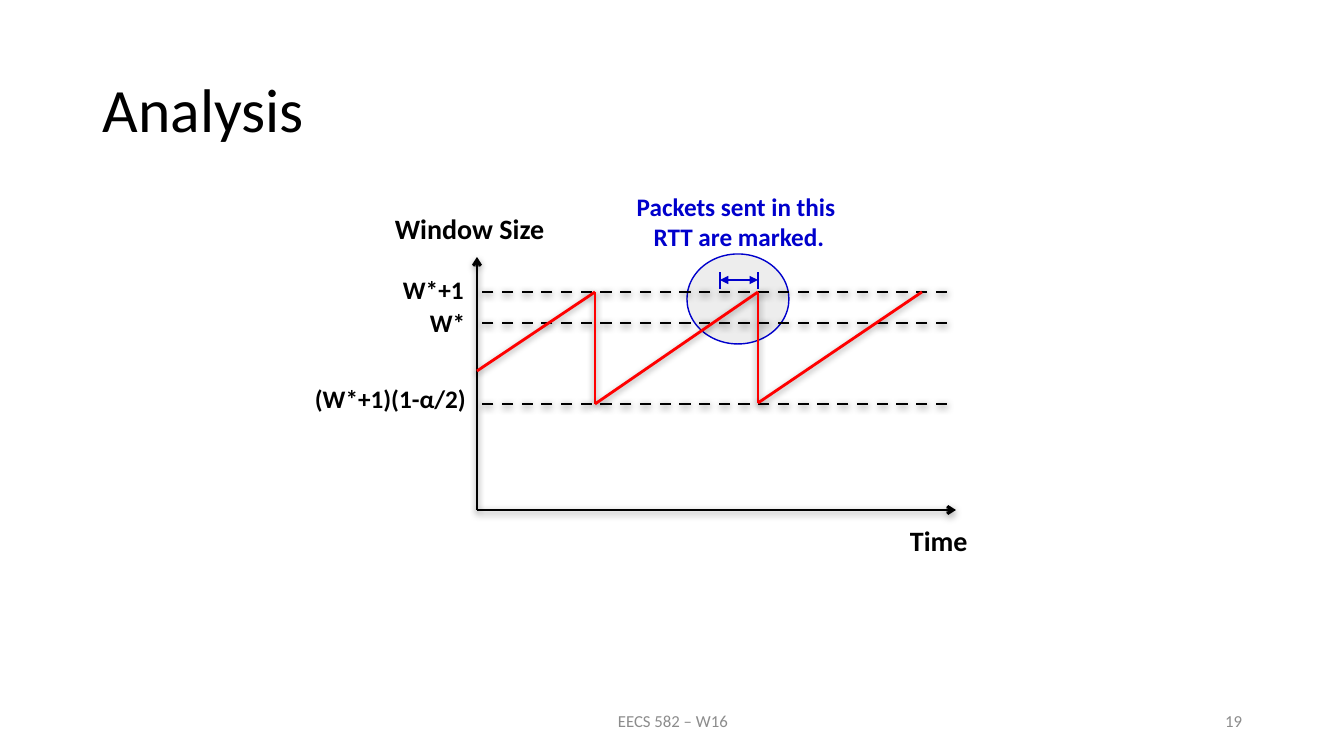
from lxml.etree import SubElement
from pptx import Presentation
from pptx.dml.color import RGBColor
from pptx.enum.dml import MSO_LINE
from pptx.enum.shapes import MSO_CONNECTOR, MSO_SHAPE
from pptx.enum.text import MSO_ANCHOR, PP_ALIGN
from pptx.oxml.ns import qn
from pptx.util import Pt

# Content: lengths in px
PX = 914400 / 100.8
SIZE = (1344, 756)
HUES = {"ink": "000000", "blue": "0000CC", "red": "FF0000",
        "grey": "8C8C8C", "pale": "EDEDED"}

LEFT, MID, RIGHT = PP_ALIGN.LEFT, PP_ALIGN.CENTER, PP_ALIGN.RIGHT
STYLES = {
    "title": {"size": 44, "bold": False, "hue": "ink", "align": LEFT},
    "foot": {"size": 12, "bold": False, "hue": "grey", "align": MID},
    "page": {"size": 12, "bold": False, "hue": "grey", "align": RIGHT},
    "axis": {"size": 20, "bold": True, "hue": "ink", "align": LEFT},
    "level": {"size": 18, "bold": True, "hue": "ink", "align": LEFT},
    "note": {"size": 18, "bold": True, "hue": "blue", "align": MID},
}
CENTRED = ("title", "foot", "page")
TEXTS = [
    ("title", (93, 40, 1159, 146), ["Analysis"]),
    ("foot", (446, 701, 454, 40), ["EECS 582 – W16"]),
    ("page", (950, 701, 302, 40), ["19"]),
    ("note", (612, 186, 254, 72), ["Packets sent in this ", "RTT are marked."]),
    ("axis", (900, 519, 164, 44), ["Time"]),
    ("axis", (385, 207, 204, 44), ["Window Size"]),
    ("level", (393, 269, 187, 40), ["W*+1"]),
    ("level", (420, 302, 83, 40), ["W*"]),
    ("level", (305, 378, 187, 40), ["(W*+1)(1-α/2)"]),
]

LENS = (687, 254, 102, 90)
ORIGIN, TOP, END = (477, 510), 257, 956
LEVELS, DASH_END = (292, 323, 404), 947
SAW = [(477, 371), (595, 292), (595, 404), (758, 292), (758, 403), (922, 292)]
SPAN, TICK, SPAN_Y = (720, 758), (289, 272), 280

deck = Presentation()
deck.slide_width, deck.slide_height = [round(n * PX) for n in SIZE]
slide = deck.slides.add_slide(deck.slide_layouts[6])
shapes = slide.shapes


def emu(nums):
    return [round(n * PX) for n in nums]


def tint(hue):
    return RGBColor.from_string(HUES[hue])


def write(style, box, lines):
    form = STYLES[style]
    frame = shapes.add_textbox(*emu(box)).text_frame
    frame.word_wrap = True
    frame.vertical_anchor = MSO_ANCHOR.MIDDLE if style in CENTRED else MSO_ANCHOR.TOP
    for i, text in enumerate(lines):
        para = frame.add_paragraph() if i else frame.paragraphs[0]
        para.alignment = form["align"]
        if style == "title":
            para.line_spacing = 0.9
        run = para.add_run()
        run.text = text
        font = {"name": "Calibri", "size": Pt(form["size"]), "bold": form["bold"]}
        for key, val in font.items():
            setattr(run.font, key, val)
        run.font.color.rgb = tint(form["hue"])


def draw(start, end, hue, dash=None, head=None, tail=None, shade=True):
    link = shapes.add_connector(MSO_CONNECTOR.STRAIGHT, *emu(start + end))
    link.line.color.rgb = tint(hue)
    for key, val in {"width": Pt(2), "dash_style": dash}.items():
        setattr(link.line, key, val)
    for tag, kind in (("a:headEnd", head), ("a:tailEnd", tail)):
        if kind:
            SubElement(link.line._ln, qn(tag), type=kind)
    fx = SubElement(link._element.spPr, qn("a:effectLst"))
    if shade:
        cast = SubElement(fx, qn("a:outerShdw"), blurRad="63500", dist="20000",
                          dir="5400000", rotWithShape="0")
        dark = SubElement(cast, qn("a:srgbClr"), val=HUES["ink"])
        SubElement(dark, qn("a:alpha"), val="38000")


# Circle around the marked round trip
lens = shapes.add_shape(MSO_SHAPE.OVAL, *emu(LENS))
lens.shadow.inherit = False
lens.fill.solid()
lens.fill.fore_color.rgb = tint("pale")
lens.line.color.rgb = tint("blue")
lens.line.width = Pt(1)

# Span marker with end ticks
for x in SPAN:
    draw((x, TICK[0]), (x, TICK[1]), "blue", shade=False)
draw((SPAN[0], SPAN_Y), (SPAN[1], SPAN_Y), "blue",
     head="triangle", tail="triangle", shade=False)

# Axes, window levels and sawtooth
draw(ORIGIN, (ORIGIN[0], TOP), "ink", tail="arrow")
draw(ORIGIN, (END, ORIGIN[1]), "ink", tail="arrow")
for y in LEVELS:
    draw((DASH_END, y), (ORIGIN[0], y), "ink", dash=MSO_LINE.DASH)
for start, end in zip(SAW, SAW[1:]):
    draw(start, end, "red")

# Labels
for item in TEXTS:
    write(*item)

deck.save("out.pptx")
